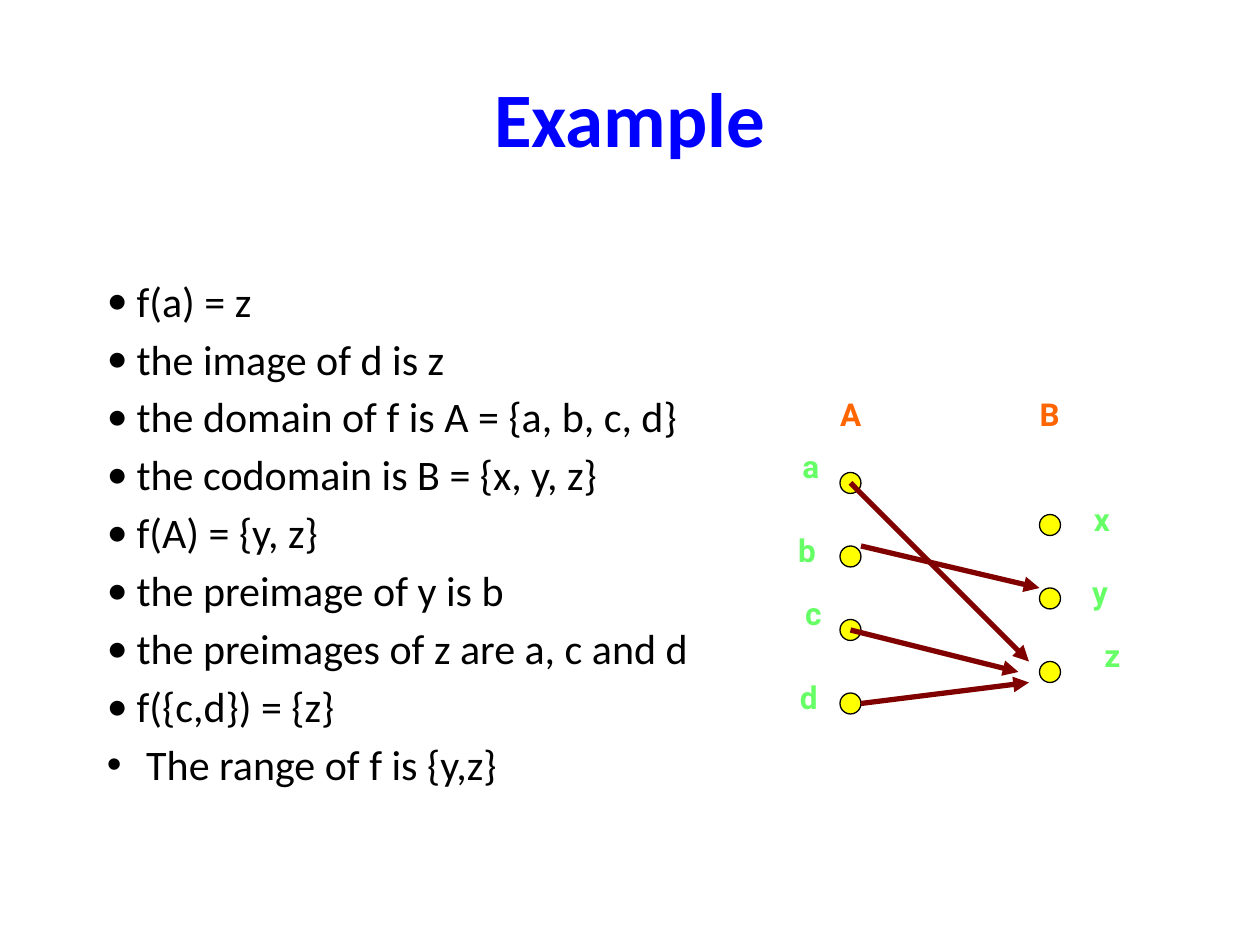
from lxml.etree import SubElement
from pptx import Presentation
from pptx.dml.color import RGBColor as RGB
from pptx.enum.shapes import MSO_CONNECTOR, MSO_SHAPE
from pptx.enum.text import MSO_ANCHOR as ANCHOR, PP_ALIGN as ALIGN
from pptx.oxml.ns import qn
from pptx.util import Pt

# Content
TITLE = "Example"
FACTS = [
    "f(a) = z",
    "the image of d is z",
    "the domain of f is A = {a, b, c, d}",
    "the codomain is B = {x, y, z}",
    "f(A) = {y, z}",
    "the preimage of y is b",
    "the preimages of z are a, c and d",
    "f({c,d}) = {z}",
    "The range of f is {y,z}",
]
# Each set: name, left and top of its first dot, elements with label left and top
SETS = [
    ("A", 480, 270, [("a", 451.5, 252), ("b", 449, 300), ("c", 453, 336), ("d", 450, 384)]),
    ("B", 594, 294, [("x", 618, 282), ("y", 617, 324), ("z", 624, 360)]),
]
# Mapping arrows: from x, y to x, y
ARROWS = [
    (486, 276, 588, 378),  # a to z
    (492, 312, 594, 336),  # b to y
    (486, 360, 582, 384),  # c to z
    (492, 402, 588, 390),  # d to z
]

# Look
THEME = {
    "title": {"name": "Calibri", "size": Pt(44), "bold": True, "color": "0000FF"},
    "body": {"name": "Calibri", "size": Pt(24), "bold": False, "color": "000000"},
    "set": {"name": "Roboto", "size": Pt(18), "bold": True, "color": "FF6600"},
    "element": {"name": "Roboto", "size": Pt(18), "bold": True, "color": "66FF66"},
    "dot": "FFFF00",
    "outline": "000000",
    "arrow": "800000",
}
DOT, DOT_STEP = 12, 42
SET_TOP = 222
LABEL_W, LABEL_H = 31, 36
BULLET_X = 36

prs = Presentation()
prs.slide_width, prs.slide_height = Pt(720), Pt(540)
slide = prs.slides.add_slide(prs.slide_layouts[6])
shapes = slide.shapes


def box(x, y, w, h):
    tf = shapes.add_textbox(Pt(x), Pt(y), Pt(w), Pt(h)).text_frame
    tf.word_wrap = True
    return tf


def write(p, text, style):
    r = p.add_run()
    r.text = text
    for key, value in THEME[style].items():
        if key == "color":
            r.font.color.rgb = RGB.from_string(value)
        else:
            setattr(r.font, key, value)


def bullet(p, font, gap):
    pPr = p._p.get_or_add_pPr()
    pPr.set("marL", str(Pt(BULLET_X + gap)))
    pPr.set("indent", str(-Pt(gap)))
    SubElement(pPr, qn("a:buFont"), typeface=font)
    SubElement(pPr, qn("a:buChar"), char="•")


def label(text, x, y, style):
    write(box(x, y, LABEL_W, LABEL_H).paragraphs[0], text, style)


def dot(x, y):
    sp = shapes.add_shape(MSO_SHAPE.OVAL, Pt(x), Pt(y), Pt(DOT), Pt(DOT))
    sp.shadow.inherit = False
    sp.fill.solid()
    sp.fill.fore_color.rgb = RGB.from_string(THEME["dot"])
    sp.line.color.rgb = RGB.from_string(THEME["outline"])
    sp.line.width = Pt(0.75)


def arrow(*ends):
    line = shapes.add_connector(MSO_CONNECTOR.STRAIGHT, *map(Pt, ends))
    line.line.color.rgb = RGB.from_string(THEME["arrow"])
    line.line.width = Pt(3)
    SubElement(line.line._get_or_add_ln(), qn("a:tailEnd"), type="triangle")
    SubElement(line._element.spPr, qn("a:effectLst"))


# Title
tf = box(36, 21.6, 648, 90)
tf.vertical_anchor = ANCHOR.MIDDLE
tf.paragraphs[0].alignment = ALIGN.CENTER
write(tf.paragraphs[0], TITLE, "title")

# Facts: the last one has a smaller bullet and a wider gap
tf = box(18, 120, 684, 362)
tf.margin_top = Pt(37.2)
for i, fact in enumerate(FACTS):
    p = tf.add_paragraph() if i else tf.paragraphs[0]
    p.space_before = Pt(4.3)
    bullet(p, *(("Arial", 22.5) if fact == FACTS[-1] else ("Calibri", 17)))
    write(p, fact, "body")

# Sets with their dots and labels
for name, x, top, elements in SETS:
    label(name, x - 7, SET_TOP, "set")
    for i, (element, label_x, label_y) in enumerate(elements):
        dot(x, top + i * DOT_STEP)
        label(element, label_x, label_y, "element")

# Mapping
for ends in ARROWS:
    arrow(*ends)

prs.save("out.pptx")
